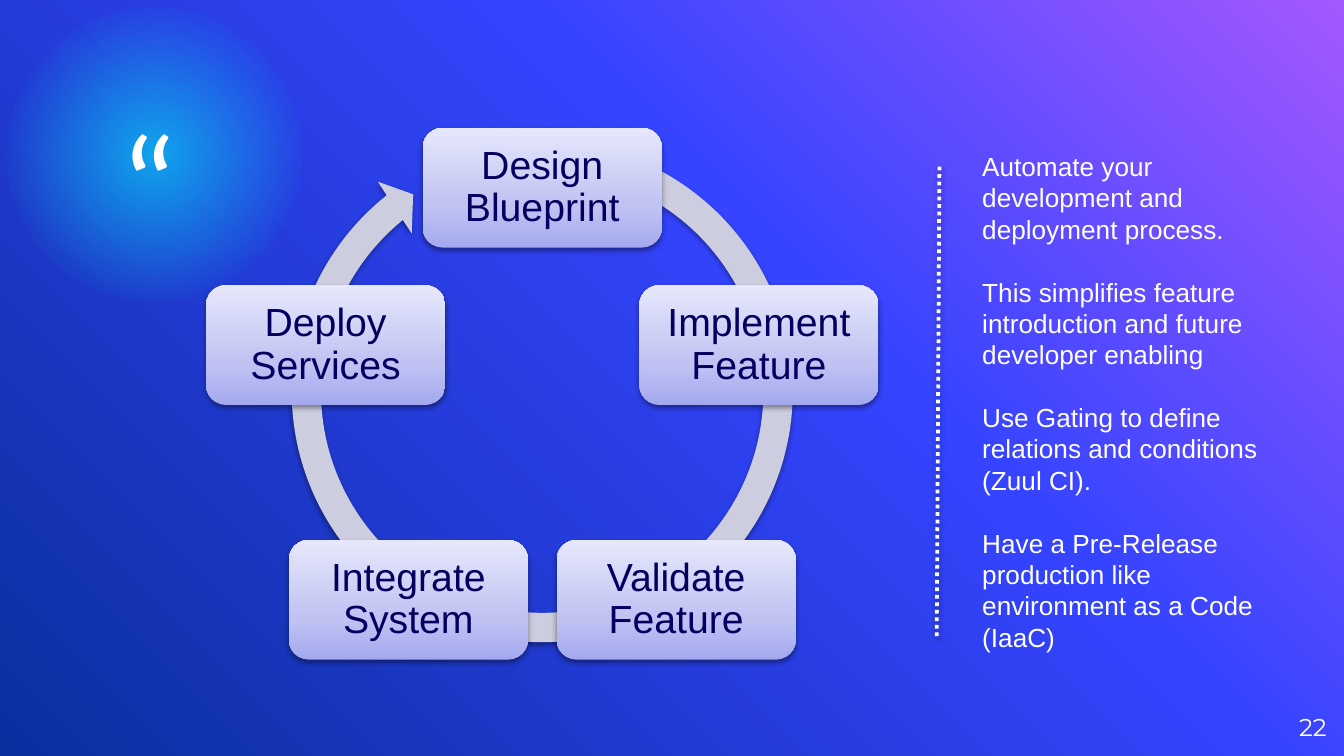
import math

import lxml.etree
import pptx
import pptx.dml.color
import pptx.enum.dml
import pptx.enum.shapes
import pptx.enum.text
import pptx.oxml.ns
import pptx.util

COLORS = {
    "white": "FFFFFF", "navy": "050060", "ring": "CCCDDF", "glow": "00FFFF",
    "violet": "A458FF", "blue": "3544FF", "deep": "0A2F9E",
    "box_bottom": "A4A9EF", "box_middle": "C0C3F2", "box_top": "E6E7FB",
}
RGB = {name: pptx.dml.color.RGBColor.from_string(value) for name, value in COLORS.items()}
SHAPES = pptx.enum.shapes.MSO_SHAPE
ALIGN = pptx.enum.text.PP_ALIGN
MIDDLE = pptx.enum.text.MSO_ANCHOR.MIDDLE
qn = pptx.oxml.ns.qn

presentation = pptx.Presentation()
presentation.slide_width = pptx.util.Inches(10)
presentation.slide_height = presentation.slide_width * 9 // 16
slide = presentation.slides.add_slide(presentation.slide_layouts[6])

# Square grid: 100 columns by 56.25 rows
COLUMN = presentation.slide_width / 100
ROW = presentation.slide_height / 56.25


def set_gradient(fill, element, stops, angle=None):
    """Fill with (percent, color, opacity) stops, radially if no angle is given."""
    fill.gradient()
    gradient = next(element.iter(qn("a:gradFill")))
    for child in list(gradient):
        gradient.remove(child)
    stop_list = lxml.etree.SubElement(gradient, qn("a:gsLst"))
    for percent, color, opacity in stops:
        stop = lxml.etree.SubElement(stop_list, qn("a:gs"), pos=str(percent * 1000))
        rgb = lxml.etree.SubElement(stop, qn("a:srgbClr"), val=COLORS[color])
        if opacity < 100:
            lxml.etree.SubElement(rgb, qn("a:alpha"), val=str(opacity * 1000))
    if angle is None:
        radial = lxml.etree.SubElement(gradient, qn("a:path"), {"path": "circle"})
        lxml.etree.SubElement(radial, qn("a:fillToRect"), dict.fromkeys("ltrb", "50000"))
    else:
        lxml.etree.SubElement(gradient, qn("a:lin"), ang=str(angle * 60000), scaled="0")


def grid(left, top, width, height):
    return [int(left * COLUMN), int(top * ROW), int(width * COLUMN), int(height * ROW)]


set_gradient(slide.background.fill, slide.element,
             [(0, "violet", 100), (39, "blue", 100), (100, "deep", 100)], 135)

# Glow behind the quotation mark
glow = slide.shapes.add_shape(SHAPES.OVAL, *grid(0.5, 0.5, 21.9, 21.9))
glow.shadow.inherit = False
glow.line.fill.background()
set_gradient(glow.fill, glow.element,
             [(0, "glow", 54), (73, "glow", 0), (100, "glow", 0)])

# Quotation mark and slide number
for text, place, font_name, size, align, anchor in [
    ("“", (9, 7.2, 6.7, 7.1), "Calibri", 72, ALIGN.LEFT, pptx.enum.text.MSO_ANCHOR.TOP),
    ("22", (92.7, 51.9, 6, 4.3), "Montserrat", 13, ALIGN.RIGHT, MIDDLE),
]:
    label = slide.shapes.add_textbox(*grid(*place))
    frame = label.text_frame
    frame.word_wrap = True
    frame.vertical_anchor = anchor
    frame.margin_left = frame.margin_right = frame.margin_top = frame.margin_bottom = 0
    frame.text = text
    paragraph = frame.paragraphs[0]
    paragraph.alignment = align
    font = paragraph.runs[0].font
    font.name, font.size, font.color.rgb = font_name, pptx.util.Pt(size), RGB["white"]

# Circular arrow behind the five steps
ring = slide.shapes.add_shape(SHAPES.CIRCULAR_ARROW, *grid(20.5, 9.3, 39.7, 39.7))
for index, value in enumerate([0.055, 3.307, 138.781, 173.241, 0.058]):
    ring.adjustments[index] = value
ring.fill.solid()
ring.fill.fore_color.rgb = RGB["ring"]
ring.line.fill.background()
shadowed = [ring]

# Steps at the corners of a regular pentagon
STEPS = ["Design Blueprint", "Implement Feature", "Validate Feature",
         "Integrate System", "Deploy Services"]
CENTER_X, CENTER_Y, RADIUS = 40.35, 30.92, 16.95
BOX_WIDTH, BOX_HEIGHT = 17.8, 8.9
for index, step in enumerate(STEPS):
    angle = 2 * math.pi * index / len(STEPS)
    left = CENTER_X + RADIUS * math.sin(angle) - BOX_WIDTH / 2
    top = CENTER_Y - RADIUS * math.cos(angle) - BOX_HEIGHT / 2
    box = slide.shapes.add_shape(SHAPES.ROUNDED_RECTANGLE,
                                 *grid(left, top, BOX_WIDTH, BOX_HEIGHT))
    set_gradient(box.fill, box.element,
                 [(0, "box_bottom", 100), (35, "box_middle", 100), (100, "box_top", 100)], 270)
    box.line.fill.background()
    frame = box.text_frame
    frame.word_wrap = True
    frame.vertical_anchor = MIDDLE
    frame.margin_left = frame.margin_right = int(1.3 * COLUMN)
    frame.margin_top = frame.margin_bottom = int(1.3 * ROW)
    frame.text = step
    paragraph = frame.paragraphs[0]
    paragraph.alignment = ALIGN.CENTER
    paragraph.line_spacing = 0.9
    font = paragraph.runs[0].font
    font.name, font.size, font.color.rgb = "Arial", pptx.util.Pt(21), RGB["navy"]
    shadowed.append(box)

# Dotted divider
divider = slide.shapes.add_connector(
    pptx.enum.shapes.MSO_CONNECTOR.STRAIGHT,
    int(69.9 * COLUMN), int(12.4 * ROW), int(69.7 * COLUMN), int(47.4 * ROW))
divider.line.color.rgb = RGB["white"]
divider.line.width = pptx.util.Pt(2)
divider.line.dash_style = pptx.enum.dml.MSO_LINE.ROUND_DOT
shadowed.append(divider)

# Soft shadow straight below
for shape in shadowed:
    effects = lxml.etree.SubElement(shape.element.spPr, qn("a:effectLst"))
    shadow = lxml.etree.SubElement(
        effects, qn("a:outerShdw"), blurRad=str(pptx.util.Pt(3.1)),
        dist=str(pptx.util.Pt(1.6)), dir=str(90 * 60000), rotWithShape="0")
    rgb = lxml.etree.SubElement(shadow, qn("a:srgbClr"), val="000000")
    lxml.etree.SubElement(rgb, qn("a:alpha"), val="38000")

# Notes beside the cycle, one text line apart
NOTES = [
    "Automate your development and deployment process.",
    "This simplifies feature introduction and future developer enabling",
    "Use Gating to define relations and conditions (Zuul CI).",
    "Have a Pre-Release production like environment as a Code (IaaC)",
]
notes_box = slide.shapes.add_textbox(*grid(72.1, 10.7, 24.5, 38.7))
frame = notes_box.text_frame
frame.word_wrap = True
frame.text = "\n".join(NOTES)
for index, paragraph in enumerate(frame.paragraphs):
    paragraph.space_before = pptx.util.Pt(16.8 if index else 0)
    font = paragraph.runs[0].font
    font.name, font.size, font.color.rgb = "Arial", pptx.util.Pt(14), RGB["white"]

presentation.save("out.pptx")
